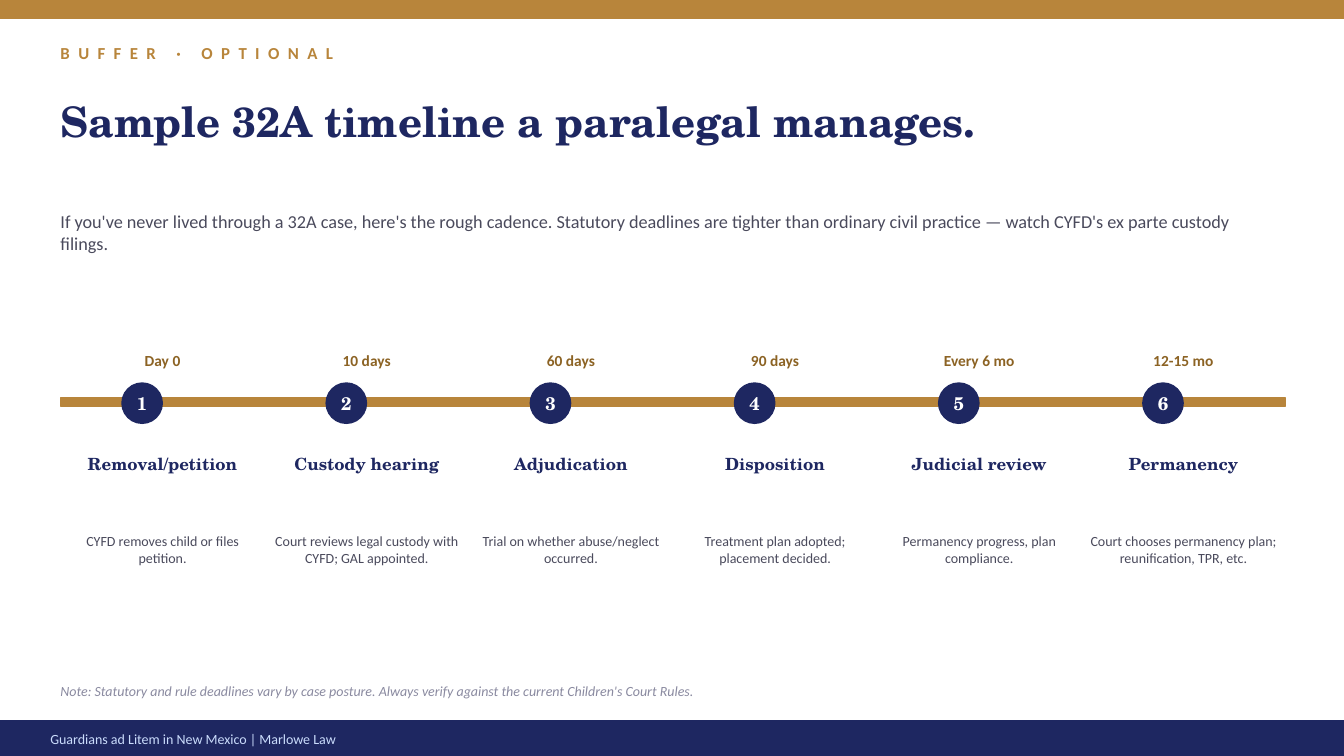
from pptx import Presentation
from pptx.dml.color import RGBColor
from pptx.enum.shapes import MSO_SHAPE
from pptx.enum.text import MSO_ANCHOR, MSO_AUTO_SIZE, PP_ALIGN
from pptx.util import Inches, Pt

COLORS = {
    "gold": "B8853B",
    "dark gold": "8C6324",
    "navy": "1E2761",
    "text": "4A4A5C",
    "note": "8A8AA0",
    "pale blue": "CADCFC",
    "white": "FFFFFF",
}
SERIF = "TeX Gyre Schola"

presentation = Presentation()
presentation.slide_width = Inches(13.33)
presentation.slide_height = Inches(7.5)
slide = presentation.slides.add_slide(presentation.slide_layouts[5])


def add_text(text, box=None, shape=None, size=10, color="text", font="Calibri",
             bold=False, italic=False, align=PP_ALIGN.LEFT, spacing=None):
    """Write text into a shape, or into a new text box when none is given."""
    if shape is None:
        shape = slide.shapes.add_textbox(*map(Inches, box))
    frame = shape.text_frame
    frame.word_wrap = True
    frame.auto_size = MSO_AUTO_SIZE.NONE
    frame.vertical_anchor = MSO_ANCHOR.MIDDLE
    frame.margin_left = frame.margin_top = frame.margin_right = frame.margin_bottom = 0
    paragraph = frame.paragraphs[0]
    paragraph.alignment = align
    run = paragraph.add_run()
    run.text = text
    run.font.name = font
    run.font.size = Pt(size)
    run.font.bold = bold
    run.font.italic = italic
    run.font.color.rgb = RGBColor.from_string(COLORS[color])
    if spacing:
        run.font._element.set("spc", str(spacing * 100))


def add_block(kind, box, color):
    """Draw a preset shape with fill and outline in one colour."""
    shape = slide.shapes.add_shape(kind, *map(Inches, box))
    shape.shadow.inherit = False
    shape.fill.solid()
    shape.fill.fore_color.rgb = RGBColor.from_string(COLORS[color])
    shape.line.color.rgb = RGBColor.from_string(COLORS[color])
    shape.line.width = Pt(1)
    return shape


# Header
add_block(MSO_SHAPE.RECTANGLE, (0, 0, 13.33, 0.18), "gold")
add_text("BUFFER · OPTIONAL", (0.6, 0.35, 12, 0.35), size=12, color="gold",
         bold=True, spacing=6)
title = slide.shapes.title
title.left, title.top, title.width, title.height = map(Inches, (0.6, 0.7, 12, 1))
add_text("Sample 32A timeline a paralegal manages.", shape=title, size=30,
         color="navy", font=SERIF, bold=True)
add_text("If you've never lived through a 32A case, here's the rough cadence. "
         "Statutory deadlines are tighter than ordinary civil practice — "
         "watch CYFD's ex parte custody filings.", (0.6, 1.95, 12, 0.7), size=13)

# Timeline
stages = [
    ("Day 0", "Removal/petition", "CYFD removes child or files petition."),
    ("10 days", "Custody hearing", "Court reviews legal custody with CYFD; GAL appointed."),
    ("60 days", "Adjudication", "Trial on whether abuse/neglect occurred."),
    ("90 days", "Disposition", "Treatment plan adopted; placement decided."),
    ("Every 6 mo", "Judicial review", "Permanency progress, plan compliance."),
    ("12-15 mo", "Permanency", "Court chooses permanency plan; reunification, TPR, etc."),
]
timeline_left, timeline_width = 0.6, 12.15
stage_width = timeline_width / len(stages)
add_block(MSO_SHAPE.RECTANGLE, (timeline_left, 3.95, timeline_width, 0.08), "gold")

for index, (deadline, name, detail) in enumerate(stages):
    left = timeline_left + index * stage_width
    marker = add_block(MSO_SHAPE.OVAL, (left + 0.61, 3.8, 0.4, 0.4), "navy")
    add_text(str(index + 1), shape=marker, size=13, color="white", font=SERIF,
             bold=True, align=PP_ALIGN.CENTER)
    add_text(deadline, (left, 3.4, stage_width, 0.35), size=11, color="dark gold",
             bold=True, align=PP_ALIGN.CENTER)
    add_text(name, (left, 4.4, stage_width, 0.4), size=12, color="navy", font=SERIF,
             bold=True, align=PP_ALIGN.CENTER)
    add_text(detail, (left + 0.05, 4.8, stage_width - 0.1, 1.3), align=PP_ALIGN.CENTER)

# Note and footer
add_text("Note: Statutory and rule deadlines vary by case posture. "
         "Always verify against the current Children's Court Rules.",
         (0.6, 6.65, 12, 0.4), color="note", italic=True)
add_block(MSO_SHAPE.RECTANGLE, (0, 7.15, 13.33, 0.35), "navy")
add_text("Guardians ad Litem in New Mexico | Marlowe Law", (0.5, 7.18, 8, 0.3),
         color="pale blue")

presentation.save("out.pptx")
